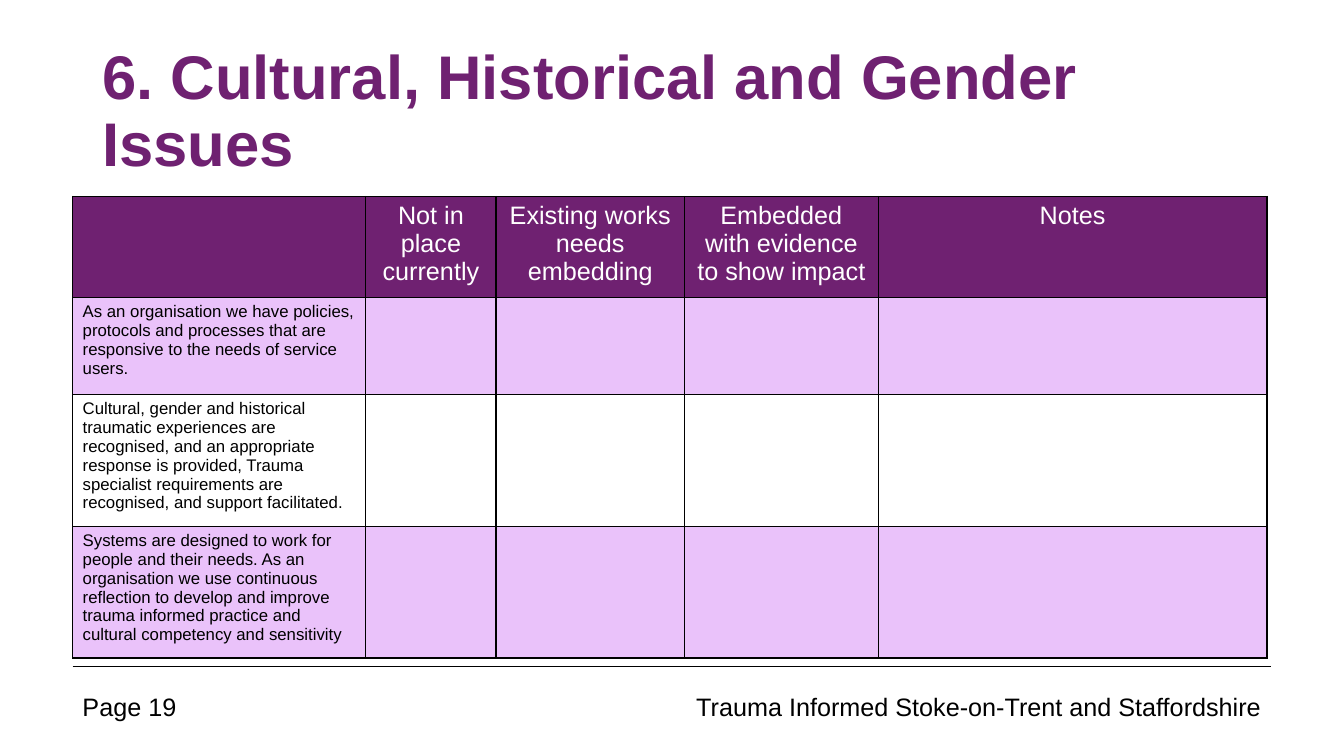
from lxml.etree import SubElement
from pptx import Presentation
from pptx.dml.color import RGBColor
from pptx.enum.shapes import MSO_CONNECTOR
from pptx.enum.text import MSO_ANCHOR, PP_ALIGN
from pptx.oxml.ns import qn
from pptx.util import Cm, Pt

FONT = "Arial"
BLACK = "000000"
WHITE = "FFFFFF"
PURPLE = "6F2171"
LILAC = "EAC2FA"

HEADINGS = [
    "",
    "Not in place currently",
    "Existing works needs embedding",
    "Embedded with evidence to show impact",
    "Notes",
]
STATEMENTS = [
    "As an organisation we have policies, protocols and processes that are "
    "responsive to the needs of service users.",
    "Cultural, gender and historical traumatic experiences are recognised, and "
    "an appropriate response is provided, Trauma specialist requirements are "
    "recognised, and support facilitated.",
    "Systems are designed to work for people and their needs. As an organisation "
    "we use continuous reflection to develop and improve trauma informed practice "
    "and cultural competency and sensitivity",
]
COLUMN_WIDTHS = [7.39, 3.28, 4.75, 4.88, 9.8]
ROW_HEIGHTS = [2.54, 2.45, 3.32, 3.32]


def colour(value):
    return RGBColor.from_string(value)


def write(frame, text, size, ink, align=PP_ALIGN.LEFT, bold=False):
    frame.text = text
    paragraph = frame.paragraphs[0]
    paragraph.alignment = align
    for span in paragraph.runs:
        span.font.name = FONT
        span.font.size = Pt(size)
        span.font.bold = bold
        span.font.color.rgb = colour(ink)
    return paragraph


def add_text(page, left, top, width, height, text, size, ink, **style):
    box = page.shapes.add_textbox(Cm(left), Cm(top), Cm(width), Cm(height))
    box.text_frame.word_wrap = True
    write(box.text_frame, text, size, ink, **style)
    return box


def add_title(page, left, top, width, height, text):
    box = add_text(page, left, top, width, height, text, 44, PURPLE, bold=True)
    box.text_frame.vertical_anchor = MSO_ANCHOR.MIDDLE
    box.text_frame.paragraphs[0].line_spacing = 0.9


def outline_cell(cell):
    properties = cell._tc.get_or_add_tcPr()
    for side in ("a:lnL", "a:lnR", "a:lnT", "a:lnB"):
        border = SubElement(properties, qn(side), w=str(Pt(1)))
        fill = SubElement(border, qn("a:solidFill"))
        SubElement(fill, qn("a:srgbClr"), val=BLACK)


def add_checklist(page, left, top):
    rows = [HEADINGS] + [[text] + [""] * (len(HEADINGS) - 1) for text in STATEMENTS]
    table = page.shapes.add_table(
        len(rows), len(HEADINGS), Cm(left), Cm(top),
        Cm(sum(COLUMN_WIDTHS)), Cm(sum(ROW_HEIGHTS)),
    ).table
    for column, width in zip(table.columns, COLUMN_WIDTHS):
        column.width = Cm(width)
    for index, (row, height, texts) in enumerate(zip(table.rows, ROW_HEIGHTS, rows)):
        row.height = Cm(height)
        heading = index == 0
        shade = PURPLE if heading else (LILAC if index % 2 else WHITE)
        for cell, text in zip(row.cells, texts):
            outline_cell(cell)
            cell.fill.solid()
            cell.fill.fore_color.rgb = colour(shade)
            if heading:
                write(cell.text_frame, text, 18, WHITE, align=PP_ALIGN.CENTER)
            else:
                write(cell.text_frame, text, 12, BLACK)


def add_footer(page, left, top, width, page_label, owner):
    rule = page.shapes.add_connector(
        MSO_CONNECTOR.STRAIGHT, Cm(left), Cm(top), Cm(left + width), Cm(top)
    )
    rule.line.color.rgb = colour(BLACK)
    rule.line.width = Pt(0.5)
    SubElement(rule._element.spPr, qn("a:effectLst"))
    label_width, text_top, height = 3.05, top + 0.5, 1.03
    owner_width = 14.88
    add_text(page, left, text_top, label_width, height, page_label, 18, BLACK)
    add_text(page, left + width - owner_width, text_top, owner_width, height,
             owner, 18, BLACK, align=PP_ALIGN.RIGHT)


def main():
    deck = Presentation()
    deck.slide_width = Cm(33.87)
    deck.slide_height = Cm(19.05)
    page = deck.slides.add_slide(deck.slide_layouts[6])
    add_title(page, 2.33, 1.01, 29.21, 3.68, "6. Cultural, Historical and Gender Issues")
    add_checklist(page, 1.83, 4.95)
    add_footer(page, 1.83, 16.79, 30.2, "Page 19",
               "Trauma Informed Stoke-on-Trent and Staffordshire")
    deck.save("out.pptx")


if __name__ == "__main__":
    main()
